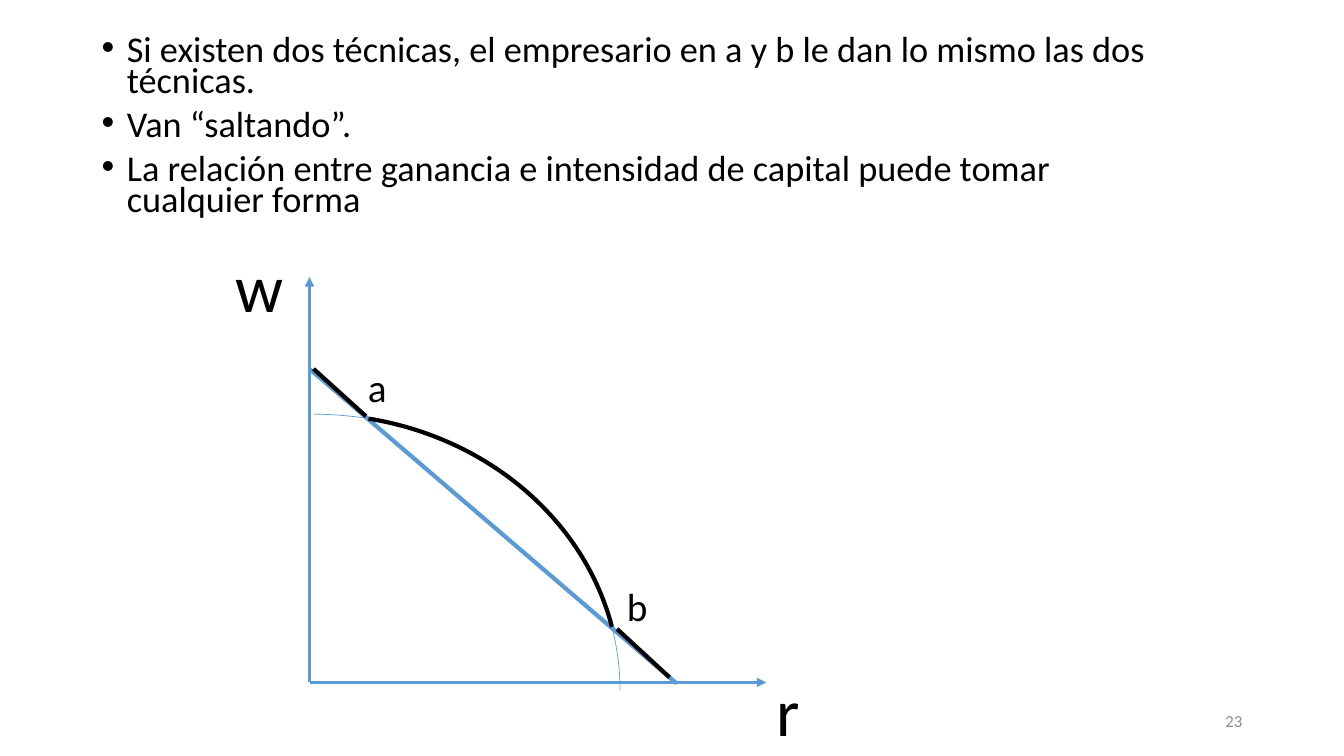
from dataclasses import dataclass

from lxml import etree
from pptx import Presentation
from pptx.dml.color import RGBColor
from pptx.enum.shapes import MSO_CONNECTOR as Connector, MSO_SHAPE as Shape
from pptx.enum.text import MSO_ANCHOR as Anchor, PP_ALIGN as Align
from pptx.oxml.ns import qn
from pptx.util import Inches, Pt


@dataclass(frozen=True)
class Theme:
    font: str = "Calibri"
    ink: str = "000000"
    blue: str = "5B9BD5"
    muted: str = "8C8C8C"
    body_size: float = 25.9
    axis_size: float = 48
    point_size: float = 28
    number_size: float = 12
    thin: float = 0.5
    axis_width: float = 2.25
    thick: float = 3


THEME = Theme()

BULLETS = [
    "Si existen dos técnicas, el empresario en a y b le dan lo mismo las dos técnicas.",
    "Van “saltando”.",
    "La relación entre ganancia e intensidad de capital puede tomar cualquier forma",
]


def add_text_frame(slide, box):
    frame = slide.shapes.add_textbox(*map(Inches, box)).text_frame
    frame.word_wrap = True
    return frame


def add_run(paragraph, text, size, color=THEME.ink):
    run = paragraph.add_run()
    run.text = text
    run.font.name = THEME.font
    run.font.size = Pt(size)
    run.font.color.rgb = RGBColor.from_string(color)


def style_line(line, color, width):
    line.color.rgb = RGBColor.from_string(color)
    line.width = Pt(width)


def add_line(slide, start, end, color, width, arrow=False):
    connector = slide.shapes.add_connector(
        Connector.STRAIGHT, *map(Inches, (*start, *end))
    )
    style_line(connector.line, color, width)
    properties = connector._element.spPr
    if arrow:
        etree.SubElement(properties.find(qn("a:ln")), qn("a:tailEnd"), type="triangle")
    etree.SubElement(properties, qn("a:effectLst"))


def add_arc(slide, box, color, width, angles=None):
    arc = slide.shapes.add_shape(Shape.ARC, *map(Inches, box))
    arc.shadow.inherit = False
    arc.fill.background()
    style_line(arc.line, color, width)
    for index, angle in enumerate(angles or ()):
        arc.adjustments[index] = angle * 0.6


def add_bullets(slide, box):
    frame = add_text_frame(slide, box)
    for index, text in enumerate(BULLETS):
        paragraph = frame.add_paragraph() if index else frame.paragraphs[0]
        paragraph.line_spacing = 0.7
        paragraph.space_before = Pt(10)
        properties = paragraph._p.get_or_add_pPr()
        properties.set("marL", str(Inches(0.25)))
        properties.set("indent", str(-Inches(0.25)))
        etree.SubElement(properties, qn("a:buFont"), typeface="Arial")
        etree.SubElement(properties, qn("a:buChar"), char="•")
        add_run(paragraph, text, THEME.body_size)


def add_wage_profit_chart(slide, box):
    left, top, width, height = box

    def at(x, y):
        return left + x, top + y

    label_width = 0.83
    origin = at(label_width, 4.39)
    arc_box = (*at(-2.16, 1.73), 6.07, 5.47)

    add_line(slide, origin, at(label_width, 0.37), THEME.blue, THEME.axis_width, True)
    add_line(slide, origin, at(width - label_width, 4.39), THEME.blue,
             THEME.axis_width, True)
    add_arc(slide, arc_box, THEME.blue, THEME.thin)
    add_line(slide, at(label_width, 1.28), at(4.47, 4.4), THEME.blue, THEME.thick)

    labels = [
        ("w", 0, 0, 0.91, THEME.axis_size),
        ("r", width - label_width, height - 0.91, 0.91, THEME.axis_size),
        ("a", 1.31, 1.18, 0.57, THEME.point_size),
        ("b", 3.88, 3.35, 0.57, THEME.point_size),
    ]
    for text, x, y, label_height, size in labels:
        frame = add_text_frame(slide, (*at(x, y), label_width, label_height))
        add_run(frame.paragraphs[0], text, size)

    add_arc(slide, arc_box, THEME.ink, THEME.thick, (281.35, 348.05))
    for start, end in [((0.87, 1.28), (1.39, 1.75)), ((3.88, 3.86), (4.4, 4.34))]:
        add_line(slide, at(*start), at(*end), THEME.ink, THEME.thick)


def add_slide_number(slide, box):
    frame = add_text_frame(slide, box)
    frame.vertical_anchor = Anchor.MIDDLE
    paragraph = frame.paragraphs[0]
    paragraph.alignment = Align.RIGHT
    add_run(paragraph, "23", THEME.number_size, THEME.muted)


def main():
    presentation = Presentation()
    presentation.slide_width = Inches(13.33)
    presentation.slide_height = Inches(7.5)
    slide = presentation.slides.add_slide(presentation.slide_layouts[6])
    add_bullets(slide, (0.91, 0.33, 10.7, 2.04))
    add_wage_profit_chart(slide, (2.24, 2.38, 6.19, 5.12))
    add_slide_number(slide, (9.42, 6.95, 3, 0.4))
    presentation.save("out.pptx")


if __name__ == "__main__":
    main()
